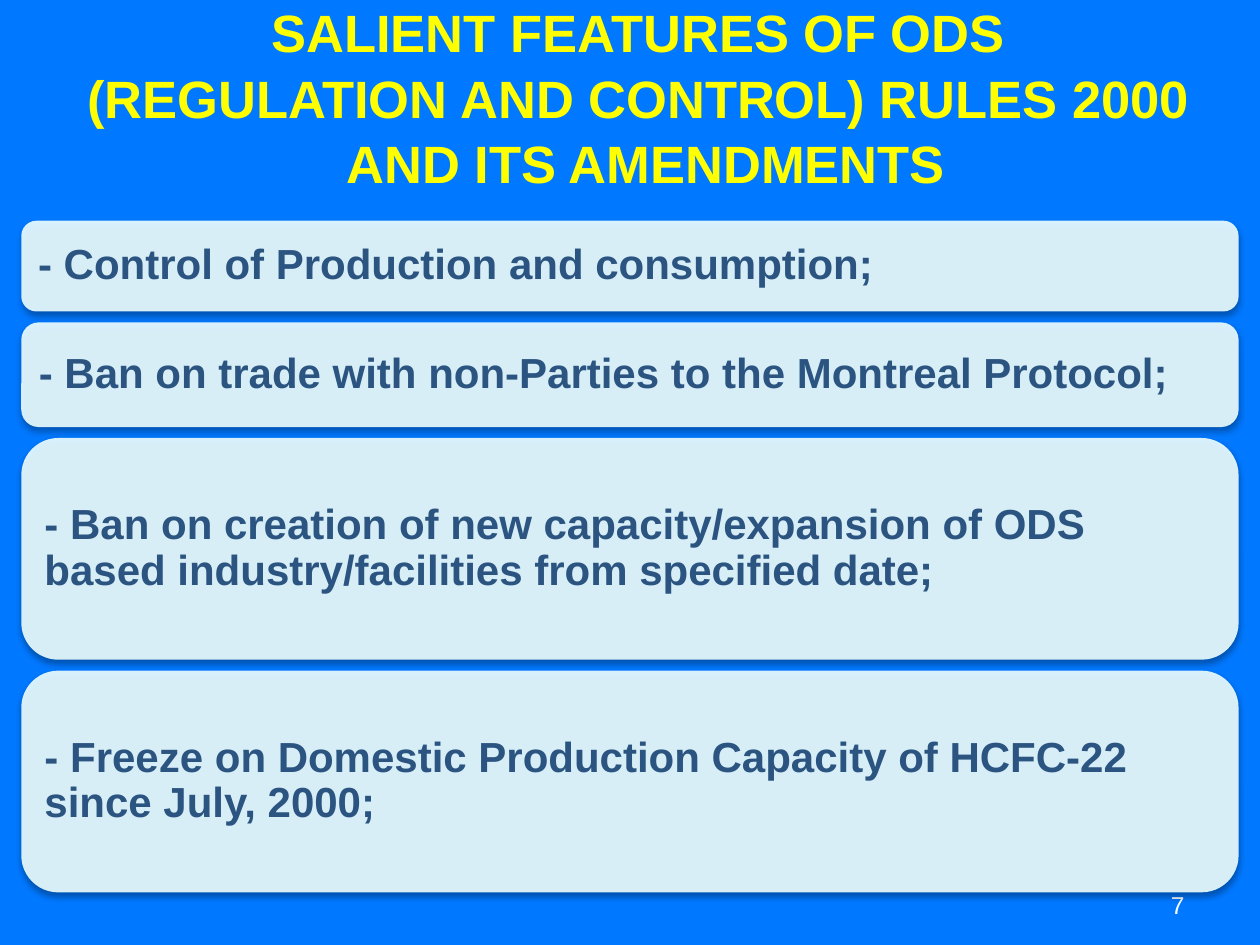
import pptx
import pptx.dml.color
import pptx.enum.shapes
import pptx.enum.text
import pptx.oxml
import pptx.oxml.ns
import pptx.util
from lxml import etree

Cm = pptx.util.Cm
Pt = pptx.util.Pt
ALIGN = pptx.enum.text.PP_ALIGN
ANCHOR = pptx.enum.text.MSO_ANCHOR
qn = pptx.oxml.ns.qn

COLORS = {
    "background": "0078FF",
    "title": "FFFF00",
    "card": "EFFFFF",
    "card_text": "2B5481",
    "page_number": "FFFFFF",
}
TITLE_LINES = [
    "SALIENT FEATURES OF ODS ",
    "(REGULATION AND CONTROL) RULES 2000 ",
    "AND ITS AMENDMENTS",
]
FEATURES = [
    ("- Control of Production and consumption;", 1.83),
    ("- Ban on trade with non-Parties to the Montreal Protocol;", 2.11),
    ("- Ban on creation of new capacity/expansion of ODS based "
     "industry/facilities from specified date;", 4.47),
    ("- Freeze on Domestic Production Capacity of HCFC-22 since July, 2000;", 4.47),
]
CARD_GAP = 0.22


def rgb(name):
    """Return the palette colour of that name."""
    return pptx.dml.color.RGBColor.from_string(COLORS[name])


def write_text(shape, lines, *, size, color, bold=False, align=ALIGN.LEFT,
               anchor=ANCHOR.MIDDLE, spacing=1.0):
    """Fill a shape with one formatted paragraph per line."""
    frame = shape.text_frame
    frame.text = "\n".join(lines)
    frame.word_wrap = True
    frame.auto_size = pptx.enum.text.MSO_AUTO_SIZE.NONE
    frame.vertical_anchor = anchor
    for paragraph in frame.paragraphs:
        paragraph.alignment = align
        paragraph.line_spacing = spacing
        for run in paragraph.runs:
            run.font.name = "Arial"
            run.font.size = Pt(size)
            run.font.bold = bold
            run.font.color.rgb = rgb(color)


def add_alpha(color_element, percent):
    """Set the opacity of a colour element."""
    alpha = etree.SubElement(color_element, qn("a:alpha"))
    alpha.set("val", str(percent * 1000))


def add_soft_shadow(shape):
    """Give a shape a soft shadow straight below it."""
    shape.shadow.inherit = False
    effects = shape.element.spPr.find(qn("a:effectLst"))
    shadow = etree.SubElement(effects, qn("a:outerShdw"), blurRad=str(Pt(3.5)),
                              dist=str(Pt(2.2)), dir="5400000", rotWithShape="0")
    add_alpha(etree.SubElement(shadow, qn("a:srgbClr"), val="000000"), 32)


def place_title(slide, left, top, width, height):
    """Move the title placeholder into its box and write the heading."""
    title = slide.shapes.title
    title.left, title.top = Cm(left), Cm(top)
    title.width, title.height = Cm(width), Cm(height)
    write_text(title, TITLE_LINES, size=30, color="title", bold=True,
               align=ALIGN.CENTER, anchor=ANCHOR.BOTTOM, spacing=1.04)


def place_page_number(slide, left, top, width, height):
    """Write the page number at the lower right of its box."""
    number = slide.shapes.add_textbox(Cm(left), Cm(top), Cm(width), Cm(height))
    write_text(number, ["7"], size=14, color="page_number",
               align=ALIGN.RIGHT, anchor=ANCHOR.BOTTOM)


def place_features(slide, left, top, width):
    """Stack the feature cards downwards with equal gaps."""
    for feature, height in FEATURES:
        card = slide.shapes.add_shape(
            pptx.enum.shapes.MSO_SHAPE.ROUNDED_RECTANGLE,
            Cm(left), Cm(top), Cm(width), Cm(height))
        card.fill.solid()
        card.fill.fore_color.rgb = rgb("card")
        add_alpha(card.element.spPr.find(qn("a:solidFill"))[0], 90)
        card.line.fill.background()
        add_soft_shadow(card)
        write_text(card, [feature], size=24, color="card_text", bold=True, spacing=0.9)
        top += height + CARD_GAP


def main():
    """Build the slide and save it."""
    deck = pptx.Presentation()
    deck.slide_width, deck.slide_height = Cm(25.4), Cm(19.05)
    slide = deck.slides.add_slide(deck.slide_layouts[5])
    slide.background.fill.solid()
    slide.background.fill.fore_color.rgb = rgb("background")
    place_title(slide, 0.64, -0.2, 24.76, 4.24)
    place_page_number(slide, 18.2, 17.35, 5.93, 1.32)
    place_features(slide, 0.43, 4.45, 24.54)
    deck.save("out.pptx")


if __name__ == "__main__":
    main()
